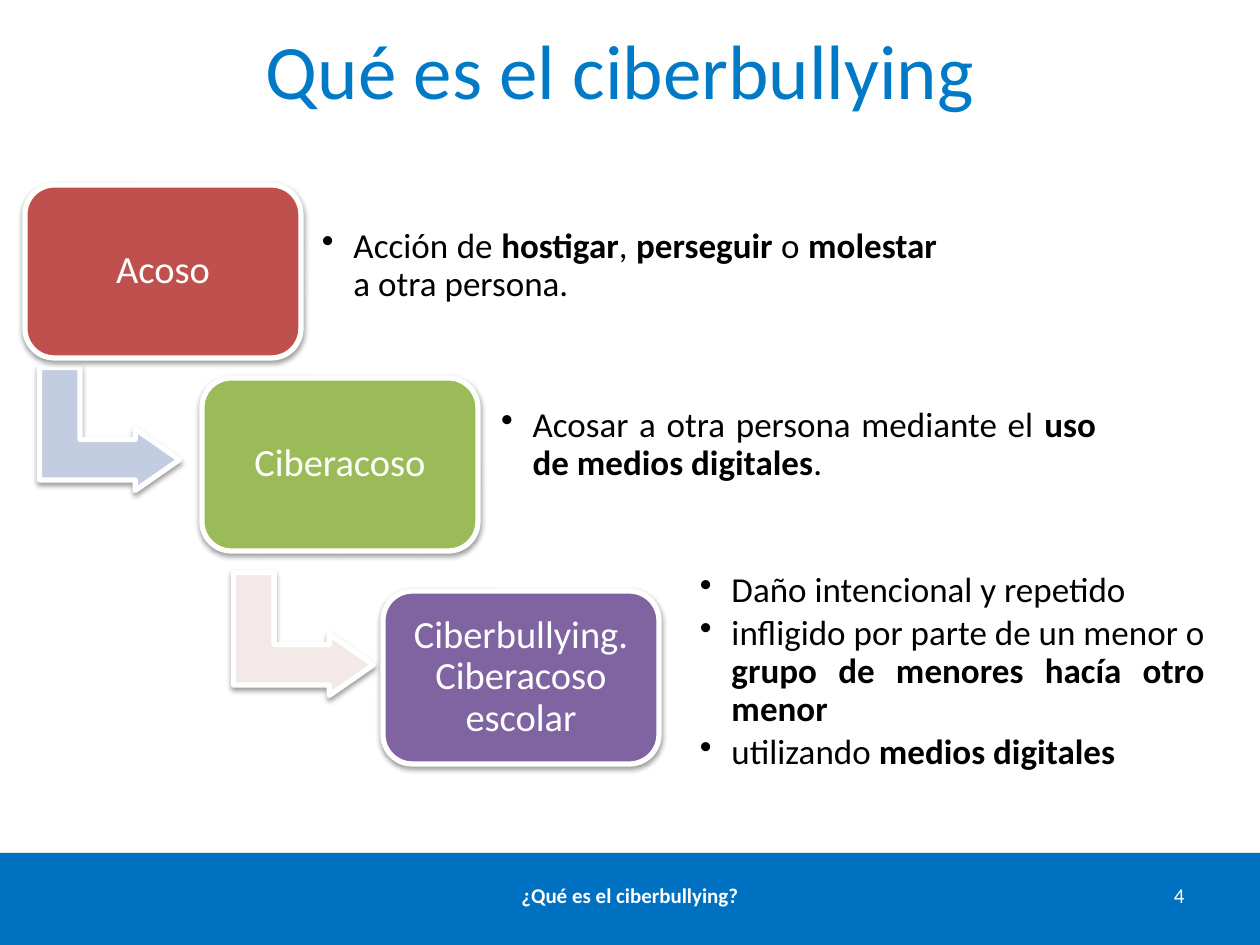
import pptx
import pptx.util
import pptx.dml.color
import pptx.enum.shapes
import pptx.enum.text
import pptx.oxml
import pptx.oxml.ns

RGB = pptx.dml.color.RGBColor
SHAPE = pptx.enum.shapes.MSO_SHAPE
ALIGN = pptx.enum.text.PP_ALIGN
ANCHOR = pptx.enum.text.MSO_ANCHOR

PX = 914400 // 126
WHITE = RGB(0xFF, 0xFF, 0xFF)
BLACK = RGB(0, 0, 0)
TITLE_BLUE = RGB(0x00, 0x7A, 0xC6)
FOOTER_BLUE = RGB(0x00, 0x70, 0xC0)
RED = RGB(0xC0, 0x50, 0x4D)
GREEN = RGB(0x9B, 0xBB, 0x59)
PURPLE = RGB(0x80, 0x64, 0xA2)
PALE_BLUE = RGB(0xC2, 0xCD, 0xE1)
PALE_PINK = RGB(0xF4, 0xE9, 0xE9)

TITLE = "Qué es el ciberbullying"
FOOTER = "**¿Qué es el ciberbullying?**"
PAGE = "4"
BOX_W, BOX_H, BOX_PAD = 276, 173, 8
ARROW_W, ARROW_H = 123, 140

# Double asterisks enclose bold words.
STEPS = [
    dict(label="Acoso", color=RED, corner=(25, 185), details_at=(312, 208, 635, 117),
         details=["Acción de **hostigar**, **perseguir** o **molestar** a otra persona."]),
    dict(label="Ciberacoso", color=GREEN, corner=(202, 378), details_at=(491, 387, 615, 117),
         details=["Acosar a otra persona mediante el **uso de medios digitales**."]),
    dict(label="Ciberbullying. Ciberacoso escolar", color=PURPLE, corner=(383, 591),
         details_at=(690, 622, 525, 100),
         details=["Daño intencional y repetido",
                  "infligido por parte de un menor o **grupo de menores hacía otro menor**",
                  "utilizando **medios digitales**"]),
]
ARROWS = [((48, 359), PALE_BLUE), ((242, 564), PALE_PINK)]


def px(*values):
    return [v * PX for v in values]


def add_shadow(sp, alpha, dist):
    """Add a soft black shadow falling straight down; dist is in EMU."""
    sp.shadow.inherit = False
    effects = sp._element.spPr.find(pptx.oxml.ns.qn("a:effectLst"))
    effects.append(pptx.oxml.parse_xml(
        f'<a:outerShdw {pptx.oxml.ns.nsdecls("a")} blurRad="40000" dist="{dist}" dir="5400000" '
        f'rotWithShape="0"><a:srgbClr val="000000"><a:alpha val="{alpha * 1000}"/>'
        '</a:srgbClr></a:outerShdw>'))


def add_block(slide, kind, box, fill, outlined=True, adjustments=()):
    sp = slide.shapes.add_shape(kind, *px(*box))
    sp.fill.solid()
    sp.fill.fore_color.rgb = fill
    if outlined:
        sp.line.color.rgb = WHITE
        sp.line.width = pptx.util.Pt(3)
        add_shadow(sp, 38, 20000)
    else:
        sp.line.fill.background()
        add_shadow(sp, 35, 23000)
    for i, value in enumerate(adjustments):
        sp.adjustments[i] = value
    return sp


def add_bullet(p):
    pPr = p._p.get_or_add_pPr()
    pPr.set("marL", "228600")
    pPr.set("indent", "-228600")
    pPr.append(pptx.oxml.parse_xml(f'<a:buChar {pptx.oxml.ns.nsdecls("a")} char="•"/>'))


def add_text(slide, paragraphs, box, size=12, color=WHITE, align=ALIGN.CENTER,
             anchor=ANCHOR.TOP, inset=None, spacing=None, after=None, bullets=False):
    tf = slide.shapes.add_textbox(*px(*box)).text_frame
    tf.word_wrap = True
    tf.vertical_anchor = anchor
    if inset is not None:
        tf.margin_left = tf.margin_top = tf.margin_right = tf.margin_bottom = inset * PX
    for i, text in enumerate(paragraphs):
        p = tf.add_paragraph() if i else tf.paragraphs[0]
        if bullets:
            add_bullet(p)
        p.alignment = align
        if spacing:
            p.line_spacing = spacing
        if after:
            p.space_after = pptx.util.Pt(after)
        for j, part in enumerate(text.split("**")):
            if part:
                r = p.add_run()
                r.text = part
                r.font.name = "Calibri"
                r.font.size = pptx.util.Pt(size)
                r.font.bold = j % 2 == 1
                r.font.color.rgb = color


def main():
    prs = pptx.Presentation()
    prs.slide_width, prs.slide_height = px(1260, 945)
    slide = prs.slides.add_slide(prs.slide_layouts[6])

    add_block(slide, SHAPE.RECTANGLE, (0, 853, 1260, 96), FOOTER_BLUE, outlined=False)
    add_text(slide, [TITLE], (44, 16, 1153, 158), size=44, color=TITLE_BLUE)
    add_text(slide, [FOOTER], (402, 876, 456, 50))
    add_text(slide, [PAGE], (903, 876, 294, 50), align=ALIGN.RIGHT)

    for corner, color in ARROWS:
        arrow = add_block(slide, SHAPE.BENT_UP_ARROW, (*corner, ARROW_W, ARROW_H), color,
                          adjustments=(0.33, 0.25, 0.36))
        arrow.rotation = 90

    for step in STEPS:
        x, y = step["corner"]
        add_block(slide, SHAPE.ROUNDED_RECTANGLE, (x, y, BOX_W, BOX_H), step["color"],
                  adjustments=(0.17,))
        add_text(slide, [step["label"]],
                 (x + BOX_PAD, y + BOX_PAD, BOX_W - 2 * BOX_PAD, BOX_H - 2 * BOX_PAD),
                 size=22, anchor=ANCHOR.MIDDLE, inset=11, spacing=0.9)
        add_text(slide, step["details"], step["details_at"], size=20, color=BLACK,
                 align=ALIGN.JUSTIFY, anchor=ANCHOR.MIDDLE, inset=10, spacing=0.9,
                 after=3, bullets=True)

    prs.save("out.pptx")


if __name__ == "__main__":
    main()
